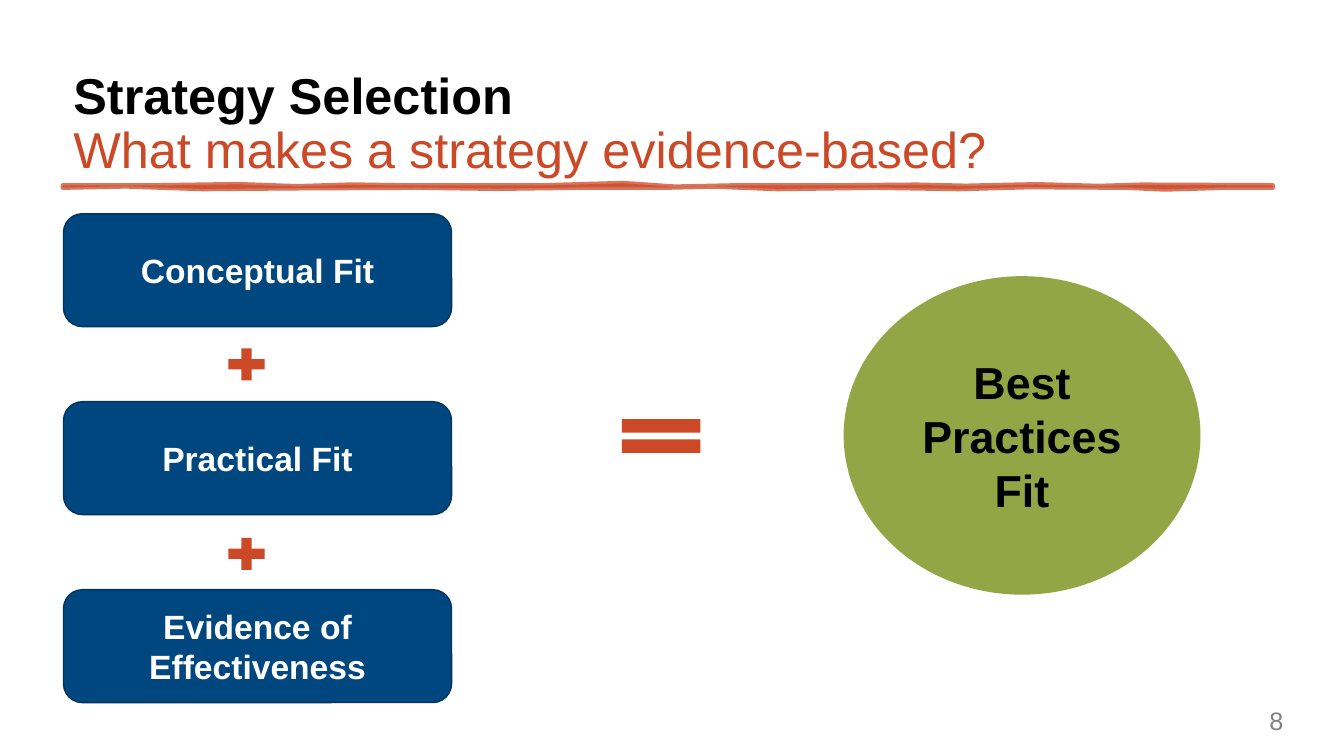
"""Build the strategy selection slide: three fits add up to a best practices fit."""
from dataclasses import dataclass

from pptx import Presentation
from pptx import util as u
from pptx.dml.color import RGBColor
from pptx.enum import shapes, text
from pptx.oxml import ns, xmlchemy

Pt = u.Pt
BLACK = RGBColor(0x00, 0x00, 0x00)
WHITE = RGBColor(0xFF, 0xFF, 0xFF)
GRAY = RGBColor(0x80, 0x80, 0x80)
RUST = RGBColor(0xCC, 0x49, 0x27)
NAVY = RGBColor(0x00, 0x46, 0x7F)
DARK_NAVY = RGBColor(0x00, 0x34, 0x5E)
GREEN = RGBColor(0x93, 0xA5, 0x45)

FONT = "Arial"
LEFT_MARGIN = 45.36
BOX_TOP, BOX_PITCH = 152.64, 134.28
PLUS_TOP, PLUS_PITCH = 244.8, 135.36
RULE_TOP, RULE_BOTTOM = 132.48, 133.92
UPPER_EDGE = [(45, 0), (115, 0), (170, -0.8), (212, 0.7), (252, -0.5), (282, 0),
              (390, 0), (445, -1.6), (482, 1), (530, 0), (610, 0), (655, -0.4),
              (690, 0.4), (740, -0.7), (785, 0.5), (815, -0.4), (909, 0)]
LOWER_EDGE = [(909, 0), (875, 0), (832, 1.3), (805, 0), (735, -0.4), (685, 1),
              (625, 0), (555, 1), (510, -0.8), (475, 0), (412, 0), (355, 0.8),
              (300, 0), (215, 0.4), (145, 1), (90, -0.9), (45, 0)]


@dataclass(frozen=True)
class Figure:
    """A filled preset shape, measured in points."""
    kind: shapes.MSO_SHAPE
    left: float
    top: float
    width: float
    height: float
    fill: RGBColor
    line: RGBColor | None = None
    label: str = ""
    size: float = 24
    color: RGBColor = WHITE


FIT_BOXES = [
    Figure(shapes.MSO_SHAPE.ROUNDED_RECTANGLE, LEFT_MARGIN, BOX_TOP + row * BOX_PITCH,
           277.2, 80.64, NAVY, DARK_NAVY, label)
    for row, label in enumerate(
        ["Conceptual Fit", "Practical Fit", "Evidence of Effectiveness"])
]
PLUS_SIGNS = [
    Figure(shapes.MSO_SHAPE.MATH_PLUS, 158.4, PLUS_TOP + row * PLUS_PITCH,
           35.28, 30.96, RUST)
    for row in range(len(FIT_BOXES) - 1)
]
EQUAL_SIGN = Figure(shapes.MSO_SHAPE.MATH_EQUAL, 434.16, 290.88, 76.32, 41.04, RUST)
RESULT = Figure(shapes.MSO_SHAPE.OVAL, 602.64, 197.28, 254.88, 227.52, GREEN,
                label="Best Practices Fit", size=32, color=BLACK)


def write_text(shape, content: str, *, size: float, color: RGBColor,
               bold: bool = False, align=text.PP_ALIGN.LEFT,
               anchor=text.MSO_ANCHOR.TOP, line_spacing: float = 1.0) -> None:
    """Add a formatted line to the first paragraph of a shape."""
    frame = shape.text_frame
    frame.word_wrap = True
    frame.vertical_anchor = anchor
    paragraph = frame.paragraphs[0]
    paragraph.alignment = align
    paragraph.line_spacing = line_spacing
    if paragraph.runs:
        paragraph.add_line_break()
    run = paragraph.add_run()
    run.text = content
    run.font.name = FONT
    run.font.size = Pt(size)
    run.font.bold = bold
    run.font.color.rgb = color


def draw_figure(slide, figure: Figure) -> None:
    """Draw one preset shape with its label."""
    shape = slide.shapes.add_shape(figure.kind, Pt(figure.left), Pt(figure.top),
                                   Pt(figure.width), Pt(figure.height))
    shape.shadow.inherit = False
    shape.fill.solid()
    shape.fill.fore_color.rgb = figure.fill
    if figure.line is None:
        shape.line.fill.background()
    else:
        shape.line.color.rgb = figure.line
        shape.line.width = Pt(1)
    if figure.label:
        write_text(shape, figure.label, size=figure.size, color=figure.color, bold=True,
                   align=text.PP_ALIGN.CENTER, anchor=text.MSO_ANCHOR.MIDDLE)


def draw_rule(slide) -> None:
    """Draw the translucent hand-drawn rule under the title."""
    upper = [(Pt(x), Pt(RULE_TOP + rise)) for x, rise in UPPER_EDGE]
    lower = [(Pt(x), Pt(RULE_BOTTOM + rise)) for x, rise in LOWER_EDGE]
    builder = slide.shapes.build_freeform(*upper[0])
    builder.add_line_segments(upper[1:] + lower)
    rule = builder.convert_to_shape()
    rule.shadow.inherit = False
    rule.fill.solid()
    rule.fill.fore_color.rgb = RUST
    rule.line.color.rgb = RUST
    rule.line.width = Pt(3.5)
    for color in rule.element.spPr.iter(ns.qn("a:srgbClr")):
        alpha = xmlchemy.OxmlElement("a:alpha")
        alpha.set("val", "75000")
        color.append(alpha)


def main() -> None:
    """Assemble and save the presentation."""
    presentation = Presentation()
    presentation.slide_width, presentation.slide_height = Pt(960), Pt(540)
    slide = presentation.slides.add_slide(presentation.slide_layouts[6])

    title = slide.shapes.add_textbox(Pt(LEFT_MARGIN), Pt(18.72), Pt(867.6), Pt(113.04))
    for content, color, bold in [("Strategy Selection", BLACK, True),
                                 ("What makes a strategy evidence-based?", RUST, False)]:
        write_text(title, content, size=36, color=color, bold=bold,
                   anchor=text.MSO_ANCHOR.BOTTOM, line_spacing=0.9)
    draw_rule(slide)

    page_number = slide.shapes.add_textbox(Pt(707.76), Pt(500.4), Pt(216), Pt(28.8))
    write_text(page_number, "8", size=18, color=GRAY, align=text.PP_ALIGN.RIGHT)

    for figure in [*FIT_BOXES, *PLUS_SIGNS, EQUAL_SIGN, RESULT]:
        draw_figure(slide, figure)
    presentation.save("out.pptx")


if __name__ == "__main__":
    main()
